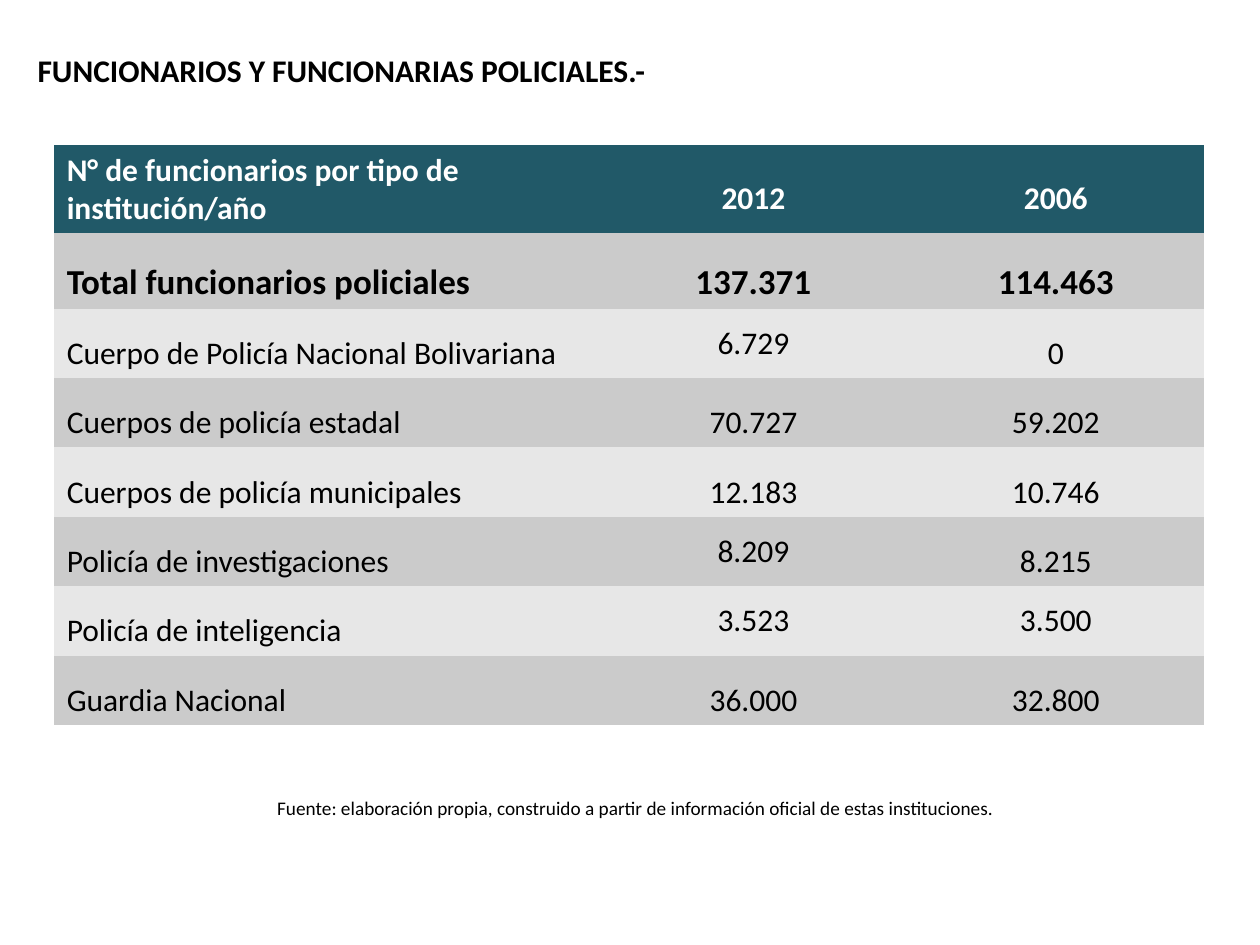
from typing import NamedTuple

from pptx import Presentation
from pptx.dml.color import RGBColor
from pptx.enum.text import MSO_ANCHOR as Anchor, PP_ALIGN as Align
from pptx.util import Inches, Pt

FONT = "Calibri"
BLACK, WHITE = "000000", "FFFFFF"
HEADER_FILL, BANDS = "215968", ("CBCBCB", "E7E7E7")
NO_GRID_STYLE = "{2D5ABB26-0587-4C30-8999-92F81FD0307C}"
SLIDE_W, SLIDE_H = 10, 7.5
COL_WIDTHS = (4.33, 2.44, 2.36)
HEADER_H, TOTAL_H, ROW_H = 0.7, 0.6, 0.55


class Style(NamedTuple):
    size: float
    bold: bool = False
    color: str = BLACK


class Row(NamedTuple):
    label: str
    y2012: str
    y2006: str
    single_spaced: tuple[int, ...] = ()


HEADER, TOTAL, BODY = Style(18, True, WHITE), Style(20, True), Style(18)
ROWS = (
    Row("N° de funcionarios por tipo de institución/año", "2012", "2006", (0,)),
    Row("Total funcionarios policiales", "137.371", "114.463"),
    Row("Cuerpo de Policía Nacional Bolivariana", "6.729", "0", (1,)),
    Row("Cuerpos de policía estadal", "70.727", "59.202"),
    Row("Cuerpos de policía municipales", "12.183", "10.746"),
    Row("Policía de investigaciones", "8.209", "8.215", (1,)),
    Row("Policía de inteligencia", "3.523", "3.500", (1, 2)),
    Row("Guardia Nacional", "36.000", "32.800"),
)


def rgb(value: str) -> RGBColor:
    return RGBColor.from_string(value)


def write(tf, text: str, style: Style, align=Align.LEFT, spacing: float = 1.0) -> None:
    tf.word_wrap = True
    p = tf.paragraphs[0]
    p.alignment, p.line_spacing = align, spacing
    r = p.add_run()
    r.text = text
    fmt = {"name": FONT, "size": Pt(style.size), "bold": style.bold}
    for name, value in fmt.items():
        setattr(r.font, name, value)
    r.font.color.rgb = rgb(style.color)


def add_text(s, box: tuple[float, ...], text: str, style: Style, align=Align.LEFT) -> None:
    sp = s.shapes.add_textbox(*map(Inches, box))
    write(sp.text_frame, text, style, align)


def add_staff_table(s, left: float, top: float) -> None:
    heights = [HEADER_H, TOTAL_H] + [ROW_H] * (len(ROWS) - 2)
    styles = [HEADER, TOTAL] + [BODY] * (len(ROWS) - 2)
    box = (left, top, sum(COL_WIDTHS), sum(heights))
    frame = s.shapes.add_table(len(ROWS), len(COL_WIDTHS), *map(Inches, box))
    table = frame.table
    table.horz_banding = False
    table._tbl.tblPr[0].text = NO_GRID_STYLE
    for column, width in zip(table.columns, COL_WIDTHS):
        column.width = Inches(width)
    for i, (row, height, style) in enumerate(zip(ROWS, heights, styles)):
        table.rows[i].height = Inches(height)
        for j, text in enumerate(row[:3]):
            cell = table.cell(i, j)
            cell.fill.solid()
            cell.fill.fore_color.rgb = rgb(BANDS[(i - 1) % 2] if i else HEADER_FILL)
            cell.vertical_anchor = Anchor.MIDDLE if i or j else Anchor.TOP
            write(cell.text_frame, text, style, Align.CENTER if j else Align.LEFT,
                  1.0 if j in row.single_spaced else 1.5)


def main() -> None:
    prs = Presentation()
    prs.slide_width, prs.slide_height = Inches(SLIDE_W), Inches(SLIDE_H)
    s = prs.slides.add_slide(prs.slide_layouts[6])
    add_text(s, (0.2, 0.36, 7.56, 0.4), "FUNCIONARIOS Y FUNCIONARIAS POLICIALES.-",
             Style(18, True))
    add_staff_table(s, 0.43, 1.15)
    add_text(s, (1.46, 6.27, 7.17, 0.29),
             "Fuente: elaboración propia, construido a partir de información oficial "
             "de estas instituciones.", Style(11), Align.CENTER)
    prs.save("out.pptx")


if __name__ == "__main__":
    main()
